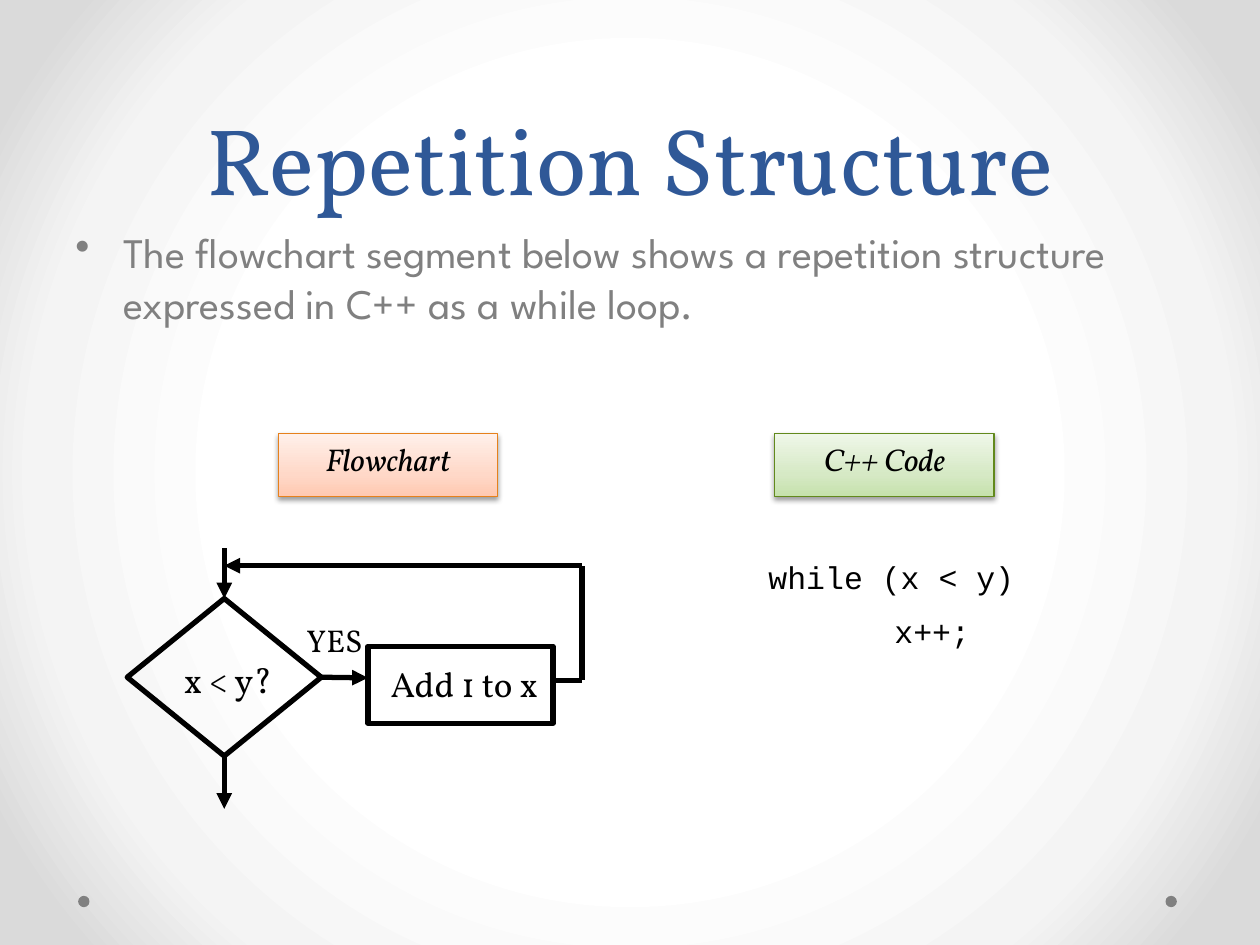
from pptx import Presentation, util as u
from pptx.dml.color import RGBColor
from pptx.enum import shapes, text
from pptx.oxml import parse_xml
from pptx.oxml.ns import nsdecls, qn

BLUE = RGBColor(0x2F, 0x58, 0x97)
GRAY = RGBColor(0x80, 0x80, 0x80)
BLACK = RGBColor(0, 0, 0)
ORANGE = RGBColor(0xE6, 0x81, 0x1C)
GREEN = RGBColor(0x62, 0x89, 0x1C)


def shades(*stops):
    return [(place, RGBColor.from_string(color)) for place, color in stops]


BACKDROP = shades((50, "FFFFFF"), (76, "F4F4F4"), (92, "DADADA"))
PEACH = shades((0, "FFC9B1"), (35, "FFD8C8"), (100, "FFF0EA"))
LIME = shades((0, "C5E1AB"), (35, "D6E9C5"), (100, "EFF7E9"))

RADIAL = ('<a:path {} path="circle"><a:fillToRect l="50000" t="50000" '
          'r="50000" b="50000"/></a:path>')
UPWARD = '<a:lin {} ang="16200000" scaled="0"/>'
SOFT_SHADOW = ('<a:effectLst {}><a:outerShdw blurRad="39370" dist="20320" '
               'dir="5400000" rotWithShape="0"><a:srgbClr val="000000">'
               '<a:alpha val="38000"/></a:srgbClr></a:outerShdw></a:effectLst>')
NO_EFFECT = "<a:effectLst {}/>"
ARROW = '<a:tailEnd {} type="triangle"/>'
BULLET = '<a:buChar {} char="•"/>'


def xml(template):
    return parse_xml(template.format(nsdecls("a")))


class Board:
    """Draws on one slide over a grid of 10 columns by 7.5 rows."""
    COLUMNS, ROWS = 10, 7.5
    SERIF, SANS, MONO = "Vollkorn", "League Spartan", "Courier New"
    STROKE = u.Pt(3)

    def __init__(self, deck):
        self.column = deck.slide_width / self.COLUMNS
        self.row = deck.slide_height / self.ROWS
        self.slide = deck.slides.add_slide(deck.slide_layouts[5])
        self.shapes = self.slide.shapes

    def place(self, x, y, *more):
        steps = (self.column, self.row) * 2
        return [u.Emu(round(n * step)) for n, step in zip((x, y, *more), steps)]

    def gradient(self, fill, owner, stops, direction):
        fill.gradient()
        grad = next(owner.iter(qn("a:gradFill")))
        for child in list(grad):
            grad.remove(child)
        items = "".join(f'<a:gs pos="{place * 1000}"><a:srgbClr val="{color}"/></a:gs>'
                        for place, color in stops)
        grad.append(xml("<a:gsLst {}>" + items + "</a:gsLst>"))
        grad.append(xml(direction))

    def background(self, stops):
        self.gradient(self.slide.background.fill, self.slide.element, stops, RADIAL)

    def set_words(self, shape, words, size, font=SERIF, color=BLACK,
                  align=text.PP_ALIGN.CENTER, anchor=text.MSO_ANCHOR.TOP, italic=False):
        frame = shape.text_frame
        frame.text = words
        frame.word_wrap = True
        frame.vertical_anchor = anchor
        for paragraph in frame.paragraphs:
            paragraph.alignment = align
            for run in paragraph.runs:
                run.font.size, run.font.name = u.Pt(size), font
                run.font.color.rgb, run.font.italic = color, italic
        return frame

    def title(self, words, area):
        heading = self.shapes.title
        heading.left, heading.top, heading.width, heading.height = self.place(*area)
        frame = self.set_words(heading, words, 54, color=BLUE,
                               anchor=text.MSO_ANCHOR.BOTTOM)
        frame.paragraphs[0].line_spacing = u.Pt(58)

    def label(self, words, area, size, **style):
        box = self.shapes.add_textbox(*self.place(*area))
        return self.set_words(box, words, size, **style)

    def indent(self, paragraph, left, first=0):
        properties = paragraph._p.get_or_add_pPr()
        properties.set("marL", str(round(left * self.column)))
        properties.set("indent", str(round(first * self.column)))
        return properties

    def bullet(self, words, area):
        frame = self.label(words, area, 24, font=self.SANS, color=GRAY,
                           align=text.PP_ALIGN.LEFT)
        self.indent(frame.paragraphs[0], 0.38, -0.38).append(xml(BULLET))

    def code(self, lines, area):
        frame = self.label("\n".join(lines), area, 18, font=self.MONO,
                           align=text.PP_ALIGN.LEFT)
        for paragraph in frame.paragraphs[1:]:
            paragraph.space_before = u.Pt(9)
            self.indent(paragraph, 1)

    def shape(self, kind, area):
        outline = self.shapes.add_shape(kind, *self.place(*area))
        outline.shadow.inherit = False
        return outline

    def dot(self, x, y):
        dot = self.shape(shapes.MSO_SHAPE.OVAL, (x, y, 0.09, 0.09))
        dot.fill.solid()
        dot.fill.fore_color.rgb = GRAY
        dot.line.fill.background()

    def banner(self, words, x, stops, edge):
        """A shaded heading with a soft shadow."""
        box = self.shape(shapes.MSO_SHAPE.RECTANGLE, (x, 3.44, 1.74, 0.5))
        self.gradient(box.fill, box.element, stops, UPWARD)
        box.line.color.rgb, box.line.width = edge, u.Pt(0.75)
        properties = box.element.spPr
        properties.replace(properties.find(qn("a:effectLst")), xml(SOFT_SHADOW))
        self.set_words(box, words, 18, italic=True)

    def node(self, kind, area):
        node = self.shape(kind, area)
        node.fill.background()
        node.line.color.rgb, node.line.width = BLACK, self.STROKE
        return node

    def line(self, start, end, arrow=True, leaves=None, enters=None):
        """leaves and enters are (node, side) pairs to join."""
        link = self.shapes.add_connector(shapes.MSO_CONNECTOR.STRAIGHT,
                                         *self.place(*start, *end))
        if leaves:
            link.begin_connect(*leaves)
        if enters:
            link.end_connect(*enters)
        link.line.color.rgb, link.line.width = BLACK, self.STROKE
        if arrow:
            link.line._get_or_add_ln().append(xml(ARROW))
        link.element.spPr.append(xml(NO_EFFECT))


def main():
    deck = Presentation()
    deck.slide_width, deck.slide_height = u.Inches(10), u.Inches(7.5)
    board = Board(deck)
    board.background(BACKDROP)
    for x in (9.25, 0.62):
        board.dot(x, 7.11)
    board.title("Repetition Structure", (0.5, 0, 9, 1.75))
    board.bullet("The flowchart segment below shows a repetition structure "
                 "expressed in C++ as a while loop.", (0.5, 1.75, 9, 4.95))
    board.code(["while (x < y)", "x++;"], (6, 4.38, 3.21, 0.85))
    board.banner("Flowchart", 2.21, PEACH, ORANGE)
    board.banner("C++ Code", 6.15, LIME, GREEN)

    test = board.node(shapes.MSO_SHAPE.FLOWCHART_DECISION, (1.01, 4.75, 1.54, 1.25))
    board.node(shapes.MSO_SHAPE.RECTANGLE, (2.92, 5.13, 1.47, 0.61))
    axis, back, loop_top, step_row = 1.78, 4.62, 4.49, 5.4
    board.line((axis, 4.35), (axis, 4.75), enters=(test, 0))
    board.line((axis, 6), (axis, 6.42), leaves=(test, 2))
    board.line((2.55, 5.38), (2.92, 5.38), leaves=(test, 3))
    board.line((4.39, step_row), (back, step_row), arrow=False)
    board.line((back, step_row), (back, loop_top), arrow=False)
    board.line((back, loop_top), (axis, loop_top))

    board.label("x < y?", (1.29, 5.18, 1.04, 0.43), 20)
    board.label("Add 1 to x", (2.92, 5.21, 1.53, 0.43), 20)
    board.label("YES", (2.23, 4.88, 0.85, 0.4), 18)
    deck.save("out.pptx")


if __name__ == "__main__":
    main()
